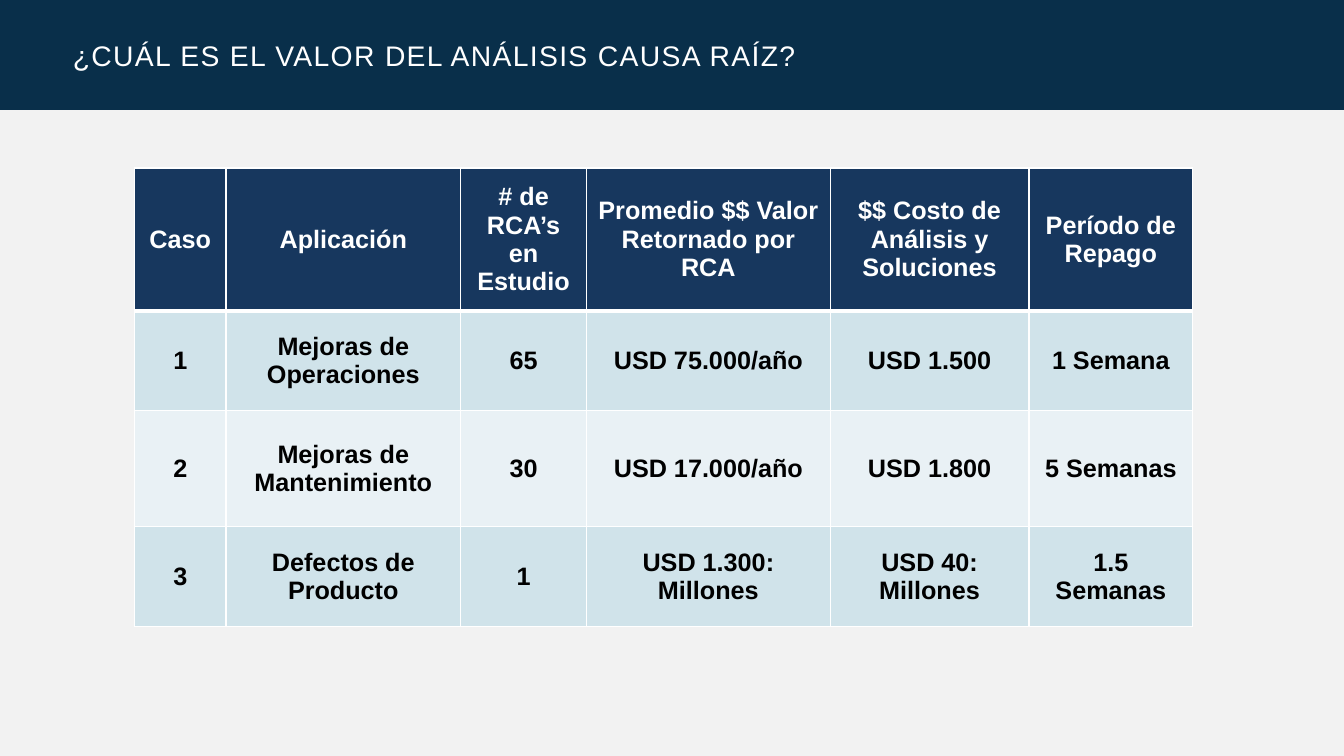
"""Build the slide on the value of root cause analysis."""
from lxml.etree import SubElement
from pptx import Presentation
from pptx.dml.color import RGBColor
from pptx.enum.shapes import MSO_SHAPE as Shape
from pptx.enum.text import MSO_ANCHOR as Anchor, MSO_AUTO_SIZE as AutoSize, PP_ALIGN as Align
from pptx.oxml.ns import qn
from pptx.util import Pt

TITLE = "¿CUÁL ES EL VALOR DEL ANÁLISIS CAUSA RAÍZ?"
CASES = [
    ("Caso", "Aplicación", "# de RCA’s en Estudio", "Promedio $$ Valor Retornado por RCA",
     "$$ Costo de Análisis y Soluciones", "Período de Repago"),
    ("1", "Mejoras de Operaciones", "65", "USD 75.000/año", "USD 1.500", "1 Semana"),
    ("2", "Mejoras de Mantenimiento", "30", "USD 17.000/año", "USD 1.800", "5 Semanas"),
    ("3", "Defectos de Producto", "1", "USD 1.300: Millones", "USD 40: Millones", "1.5 Semanas"),
]
COLORS = {"background": "F2F2F2", "banner": "092F4A", "header": "17375E", "odd": "D0E3EA",
          "even": "E9F1F5", "light": "FFFFFF", "dark": "000000"}
SLIDE_WIDTH, SLIDE_HEIGHT = 960, 540
BANNER_HEIGHT = 78.5
TABLE_LEFT, TABLE_TOP = 96, 120
COLUMN_WIDTHS = [65.5, 167.5, 90, 174, 142, 117]
ROW_HEIGHTS = [102, 71.5, 82.5, 71.5]
TITLE_BOX = {"left": Pt(42.5), "top": Pt(0), "width": Pt(874), "height": Pt(79)}
TITLE_FRAME = {"word_wrap": True, "auto_size": AutoSize.NONE, "vertical_anchor": Anchor.MIDDLE,
               "margin_left": Pt(9.5), "margin_right": Pt(9.5),
               "margin_top": Pt(5), "margin_bottom": Pt(5)}
TITLE_FONT = {"name": "Arial", "size": Pt(20.2), "bold": False}
CELL_FONT = {"name": "Arial", "size": Pt(18), "bold": True}
TITLE_SPACING = "100"


def rgb(role):
    return RGBColor.from_string(COLORS[role])


def apply(target, values):
    for name, value in values.items():
        setattr(target, name, value)


def paint(fill, role):
    fill.solid()
    fill.fore_color.rgb = rgb(role)


def write(paragraph, text, align, font, role):
    paragraph.alignment = align
    run = paragraph.add_run()
    run.text = text
    apply(run.font, font)
    run.font.color.rgb = rgb(role)
    return run


def add_borders(cell, bottom):
    properties = cell._tc.get_or_add_tcPr()
    for side, width in {"L": 1, "R": 1, "T": 1, "B": bottom}.items():
        border = SubElement(properties, qn(f"a:ln{side}"), w=str(Pt(width)))
        solid = SubElement(border, qn("a:solidFill"))
        SubElement(solid, qn("a:srgbClr"), val=COLORS["light"])


def add_banner(slide):
    banner = slide.shapes.add_shape(Shape.RECTANGLE, 0, 0, Pt(SLIDE_WIDTH), Pt(BANNER_HEIGHT))
    banner.shadow.inherit = False
    paint(banner.fill, "banner")
    banner.line.fill.background()
    slide.shapes._spTree.insert(2, banner._element)


def add_title(slide):
    title = slide.shapes.title
    apply(title, TITLE_BOX)
    apply(title.text_frame, TITLE_FRAME)
    run = write(title.text_frame.paragraphs[0], TITLE, Align.LEFT, TITLE_FONT, "light")
    run._r.get_or_add_rPr().set("spc", TITLE_SPACING)


def add_cases(slide):
    table = slide.shapes.add_table(
        len(CASES), len(COLUMN_WIDTHS), Pt(TABLE_LEFT), Pt(TABLE_TOP),
        Pt(sum(COLUMN_WIDTHS)), Pt(sum(ROW_HEIGHTS))).table
    for column, width in zip(table.columns, COLUMN_WIDTHS):
        column.width = Pt(width)
    for index, (row, height, case) in enumerate(zip(table.rows, ROW_HEIGHTS, CASES)):
        row.height = Pt(height)
        is_header = index == 0
        band = "header" if is_header else "odd" if index % 2 else "even"
        for cell, text in zip(row.cells, case):
            add_borders(cell, 3 if is_header else 1)
            paint(cell.fill, band)
            cell.vertical_anchor = Anchor.MIDDLE
            write(cell.text_frame.paragraphs[0], text, Align.CENTER, CELL_FONT,
                  "light" if is_header else "dark")


def main():
    deck = Presentation()
    apply(deck, {"slide_width": Pt(SLIDE_WIDTH), "slide_height": Pt(SLIDE_HEIGHT)})
    slide = deck.slides.add_slide(deck.slide_layouts[5])
    paint(slide.background.fill, "background")
    add_banner(slide)
    add_title(slide)
    add_cases(slide)
    deck.save("out.pptx")


if __name__ == "__main__":
    main()
